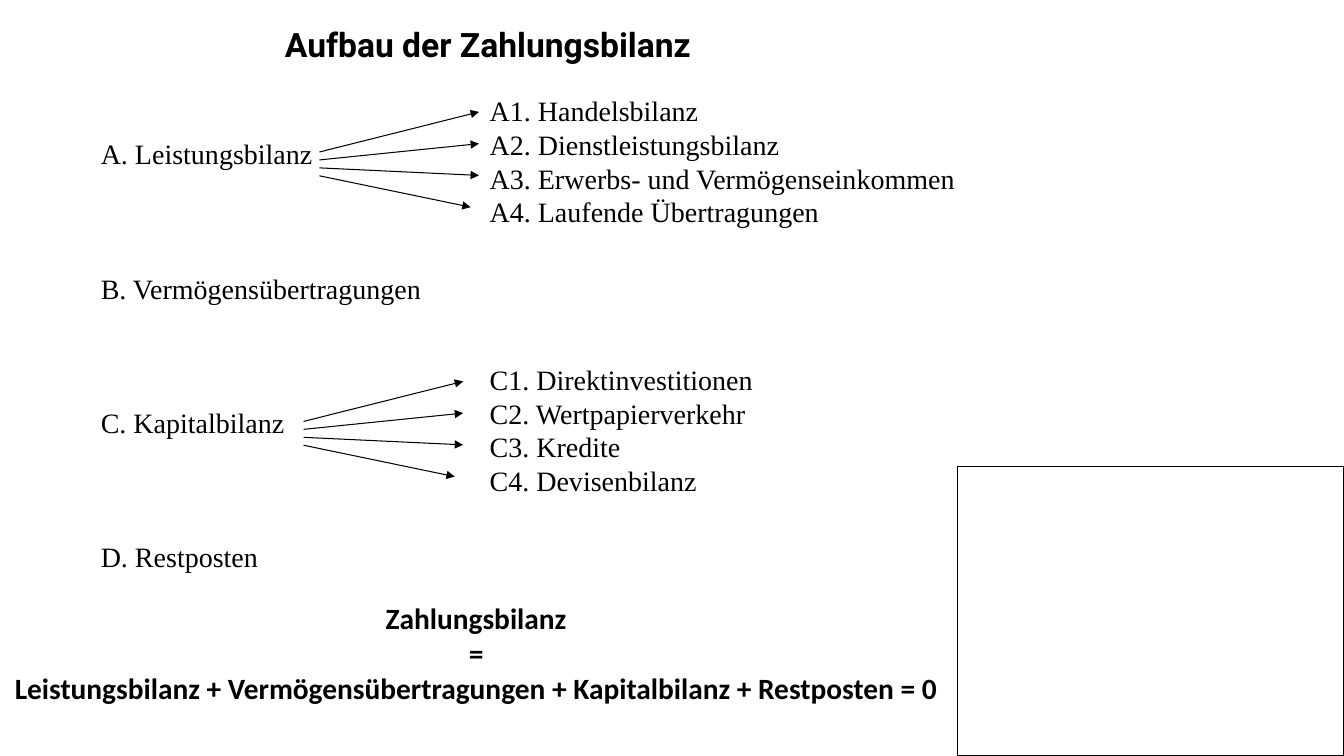
from dataclasses import dataclass

from lxml import etree
from pptx import Presentation
from pptx.dml.color import RGBColor
from pptx.enum.shapes import MSO_CONNECTOR as Connector, MSO_SHAPE as Shape
from pptx.enum.text import MSO_ANCHOR as Anchor, PP_ALIGN as Align
from pptx.oxml.ns import qn
from pptx.slide import Slide
from pptx.util import Cm, Pt

BLACK = RGBColor(0, 0, 0)
LINE_PITCH = 24


@dataclass
class SlideBuilder:
    """Draws text, lists, arrows and frames in one style on a slide."""
    slide: Slide
    color: RGBColor = BLACK
    list_font: str = "Times New Roman"

    def text(self, left, top, width, height, lines, font, size, bold=False,
             align=Align.LEFT, anchor=Anchor.TOP, wrap=True):
        shape = self.slide.shapes.add_textbox(Cm(left), Cm(top), Cm(width), Cm(height))
        frame = shape.text_frame
        frame.text = "\n".join(lines)
        frame.word_wrap = wrap
        frame.vertical_anchor = anchor
        for paragraph in frame.paragraphs:
            paragraph.alignment = align
            for run in paragraph.runs:
                run.font.name = font
                run.font.size = Pt(size)
                run.font.bold = bold
                run.font.color.rgb = self.color
        return frame.paragraphs

    def listing(self, left, top, width, height, lines, gaps):
        paragraphs = self.text(left, top, width, height, lines, self.list_font, 20)
        for index, paragraph in enumerate(paragraphs):
            paragraph.line_spacing = Pt(LINE_PITCH)
            paragraph.space_before = Pt(LINE_PITCH * gaps.get(index, 0))

    def arrow(self, start_x, start_y, end_x, end_y):
        connector = self.slide.shapes.add_connector(
            Connector.STRAIGHT, Cm(start_x), Cm(start_y), Cm(end_x), Cm(end_y))
        connector.line.color.rgb = self.color
        connector.line.width = Pt(0.75)
        etree.SubElement(connector.line._get_or_add_ln(), qn("a:tailEnd"), type="triangle")
        etree.SubElement(connector._element.spPr, qn("a:effectLst"))

    def fan(self, left, top):
        for row, reach in enumerate((4.02, 4.02, 4.02, 3.81)):
            self.arrow(left, top + 0.2 * row, left + reach, top - 1.01 + 0.8 * row)

    def frame(self, left, top, width, height):
        shape = self.slide.shapes.add_shape(
            Shape.RECTANGLE, Cm(left), Cm(top), Cm(width), Cm(height))
        shape.shadow.inherit = False
        shape.fill.background()
        shape.line.color.rgb = self.color
        shape.line.width = Pt(1)


def main():
    presentation = Presentation()
    presentation.slide_width = Cm(33.87)
    presentation.slide_height = Cm(19.05)
    builder = SlideBuilder(presentation.slides.add_slide(presentation.slide_layouts[6]))

    builder.text(6.93, 0.46, 16.13, 1.3, ["Aufbau der Zahlungsbilanz"],
                 "Roboto", 24, bold=True, anchor=Anchor.MIDDLE)
    builder.listing(2.29, 3.32, 9.4, 11.26, [
        "A. Leistungsbilanz",
        "B. Vermögensübertragungen",
        "C. Kapitalbilanz",
        "D. Restposten",
    ], {1: 3, 2: 3, 3: 3})
    builder.listing(12.09, 2.24, 12.7, 10.41, [
        "A1. Handelsbilanz",
        "A2. Dienstleistungsbilanz",
        "A3. Erwerbs- und Vermögenseinkommen",
        "A4. Laufende Übertragungen",
        "C1. Direktinvestitionen",
        "C2. Wertpapierverkehr",
        "C3. Kredite",
        "C4. Devisenbilanz",
    ], {4: 4})
    builder.fan(8.05, 3.83)
    builder.fan(7.65, 10.62)
    builder.text(0, 14.99, 24, 2.95, [
        "Zahlungsbilanz",
        "=",
        "Leistungsbilanz + Vermögensübertragungen + Kapitalbilanz + Restposten = 0",
    ], "Calibri", 21, bold=True, align=Align.CENTER, wrap=False)
    builder.frame(24.13, 11.76, 9.73, 7.29)

    presentation.save("out.pptx")


if __name__ == "__main__":
    main()
